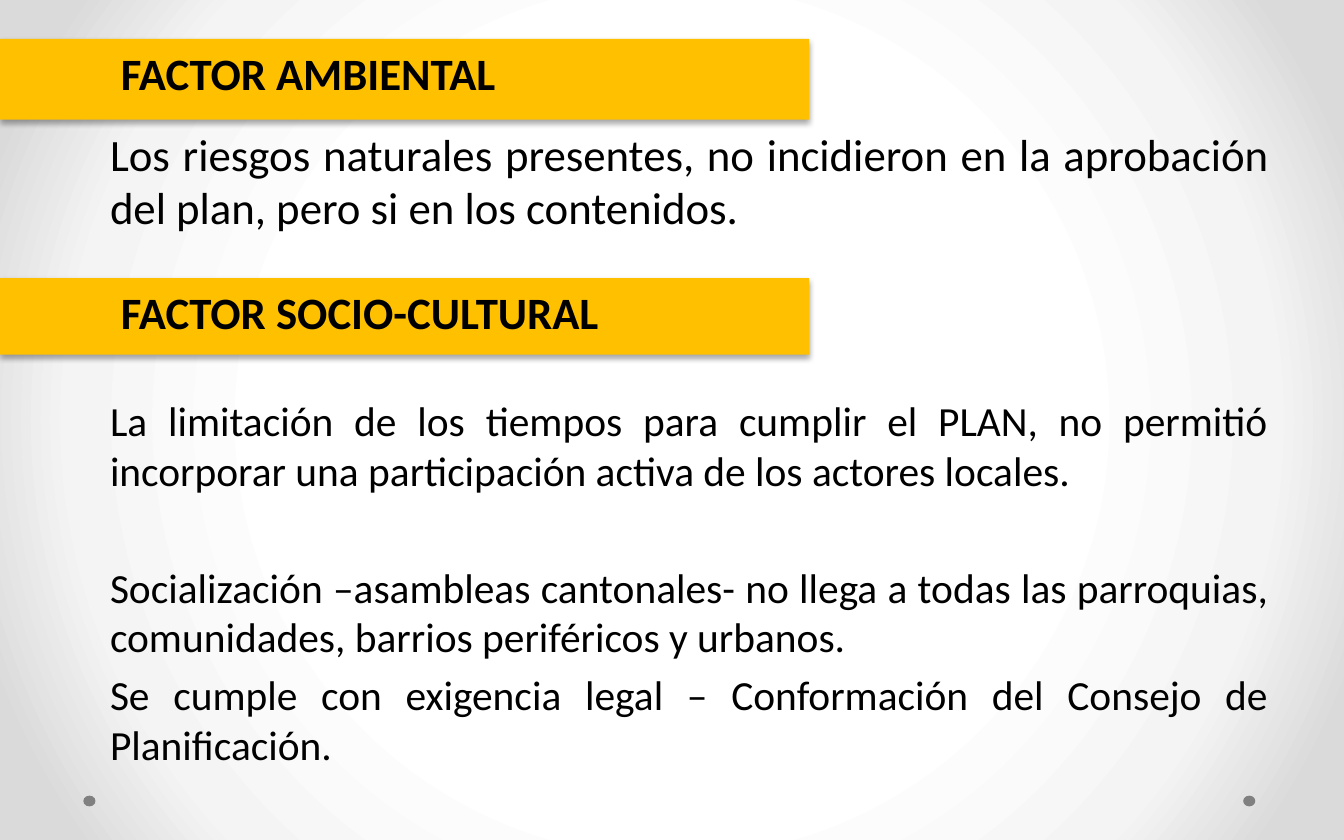
import pptx
import pptx.dml.color
import pptx.enum.shapes
import pptx.enum.text
import pptx.oxml
import pptx.util

WIDTH, HEIGHT = 10, 6.25
BAR_WIDTH, TEXT_LEFT, TEXT_WIDTH = 0.602, 0.072, 0.882
INSET, HEADING_INSET = 0.1, 0.18
NAMESPACE = 'xmlns:a="http://schemas.openxmlformats.org/drawingml/2006/main"'
BACKGROUND_STOPS = [(50, "FFFFFF"), (76, "F4F4F4"), (92, "DADADA")]
SHADOW = (
    f'<a:effectLst {NAMESPACE}><a:outerShdw blurRad="39370" dist="22860" dir="5400000" '
    'rotWithShape="0"><a:srgbClr val="000000"><a:alpha val="35000"/></a:srgbClr>'
    "</a:outerShdw></a:effectLst>"
)
SECTIONS = [
    {
        "heading": "FACTOR AMBIENTAL",
        "bar": (0.29, 0.6),
        "body": (0.89, 1.1),
        "size": 24,
        "paragraphs": [
            ("Los riesgos naturales presentes, no incidieron en la aprobación del plan, "
             "pero si en los contenidos.", 4.8),
        ],
    },
    {
        "heading": "FACTOR SOCIO-CULTURAL",
        "bar": (2.07, 0.57),
        "body": (2.89, 2.83),
        "size": 22.2,
        "paragraphs": [
            ("La limitación de los tiempos para cumplir el PLAN, no permitió incorporar "
             "una participación activa de los actores locales.", 4.4),
            ("Socialización –asambleas cantonales- no llega a todas las parroquias, "
             "comunidades, barrios periféricos y urbanos.", 36),
            ("Se cumple con exigencia legal – Conformación del Consejo de "
             "Planificación.", 4.4),
        ],
    },
]


def color(value):
    """Turn a hex string into a colour."""
    return pptx.dml.color.RGBColor.from_string(value)


def box(left, top, width, height):
    """Turn shares of the slide width and inches of height into a box."""
    return [pptx.util.Inches(length) for length in (left * WIDTH, top, width * WIDTH, height)]


def set_all(target, values):
    """Set each named attribute of an object."""
    for name, value in values.items():
        setattr(target, name, value)


def paint_background(slide):
    """Fill the slide with a radial gradient that darkens outwards."""
    fill = slide.background.fill
    fill.gradient()
    stops = "".join(
        f'<a:gs pos="{position * 1000}"><a:srgbClr val="{value}"/></a:gs>'
        for position, value in BACKGROUND_STOPS
    )
    gradient = pptx.oxml.parse_xml(
        f'<a:gradFill {NAMESPACE} rotWithShape="1"><a:gsLst>{stops}</a:gsLst>'
        '<a:path path="circle"><a:fillToRect l="50000" t="50000" r="50000" b="50000"/>'
        "</a:path></a:gradFill>"
    )
    properties = slide.background._cSld.bg.bgPr
    properties.replace(properties[0], gradient)


def add_filled(slide, kind, area, fill):
    """Add a flat shape without outline."""
    shape = slide.shapes.add_shape(kind, *area)
    shape.shadow.inherit = False
    shape.fill.solid()
    shape.fill.fore_color.rgb = color(fill)
    shape.line.fill.background()
    return shape


def write(shape, paragraphs, size, bold=False, inset=INSET):
    """Write justified paragraphs, each with its space before."""
    frame = shape.text_frame
    set_all(frame, {
        "word_wrap": True,
        "auto_size": pptx.enum.text.MSO_AUTO_SIZE.NONE,
        "vertical_anchor": pptx.enum.text.MSO_ANCHOR.TOP,
        "margin_left": pptx.util.Inches(inset),
        "margin_right": pptx.util.Inches(INSET),
        "margin_top": pptx.util.Inches(0.05),
        "margin_bottom": pptx.util.Inches(0.05),
    })
    for index, (text, space) in enumerate(paragraphs):
        paragraph = frame.add_paragraph() if index else frame.paragraphs[0]
        set_all(paragraph, {
            "alignment": pptx.enum.text.PP_ALIGN.JUSTIFY,
            "space_before": pptx.util.Pt(space),
            "line_spacing": 1.0,
        })
        run = paragraph.add_run()
        run.text = text
        set_all(run.font, {"name": "Calibri", "size": pptx.util.Pt(size), "bold": bold})
        run.font.color.rgb = color("000000")


def add_section(slide, section, title=None):
    """Place a heading bar, its heading and the body text below it."""
    top, height = section["bar"]
    bar = add_filled(slide, pptx.enum.shapes.MSO_SHAPE.RECTANGLE,
                     box(0, top, BAR_WIDTH, height), "FFC000")
    properties = bar._element.spPr
    properties.replace(properties[-1], pptx.oxml.parse_xml(SHADOW))
    area = box(TEXT_LEFT, top, 0.687, 0.59)
    if title is None:
        heading = slide.shapes.add_textbox(*area)
    else:
        heading = title
        set_all(heading, dict(zip(("left", "top", "width", "height"), area)))
        bar._element.addnext(heading._element)
    write(heading, [(section["heading"], 4.8)], 24, True, HEADING_INSET)
    body = slide.shapes.add_textbox(*box(TEXT_LEFT, section["body"][0],
                                         TEXT_WIDTH, section["body"][1]))
    write(body, section["paragraphs"], section["size"])


def add_corner_dots(slide):
    """Place a grey dot near each bottom corner."""
    for left in (0.062, 0.925):
        add_filled(slide, pptx.enum.shapes.MSO_SHAPE.OVAL,
                   box(left, 5.92, 0.009, 0.08), "808080")


def main():
    """Build and save the presentation."""
    presentation = pptx.Presentation()
    presentation.slide_width = pptx.util.Inches(WIDTH)
    presentation.slide_height = pptx.util.Inches(HEIGHT)
    slide = presentation.slides.add_slide(presentation.slide_layouts[5])
    paint_background(slide)
    add_corner_dots(slide)
    for section, title in zip(SECTIONS, (slide.shapes.title, None)):
        add_section(slide, section, title)
    presentation.save("out.pptx")


if __name__ == "__main__":
    main()
